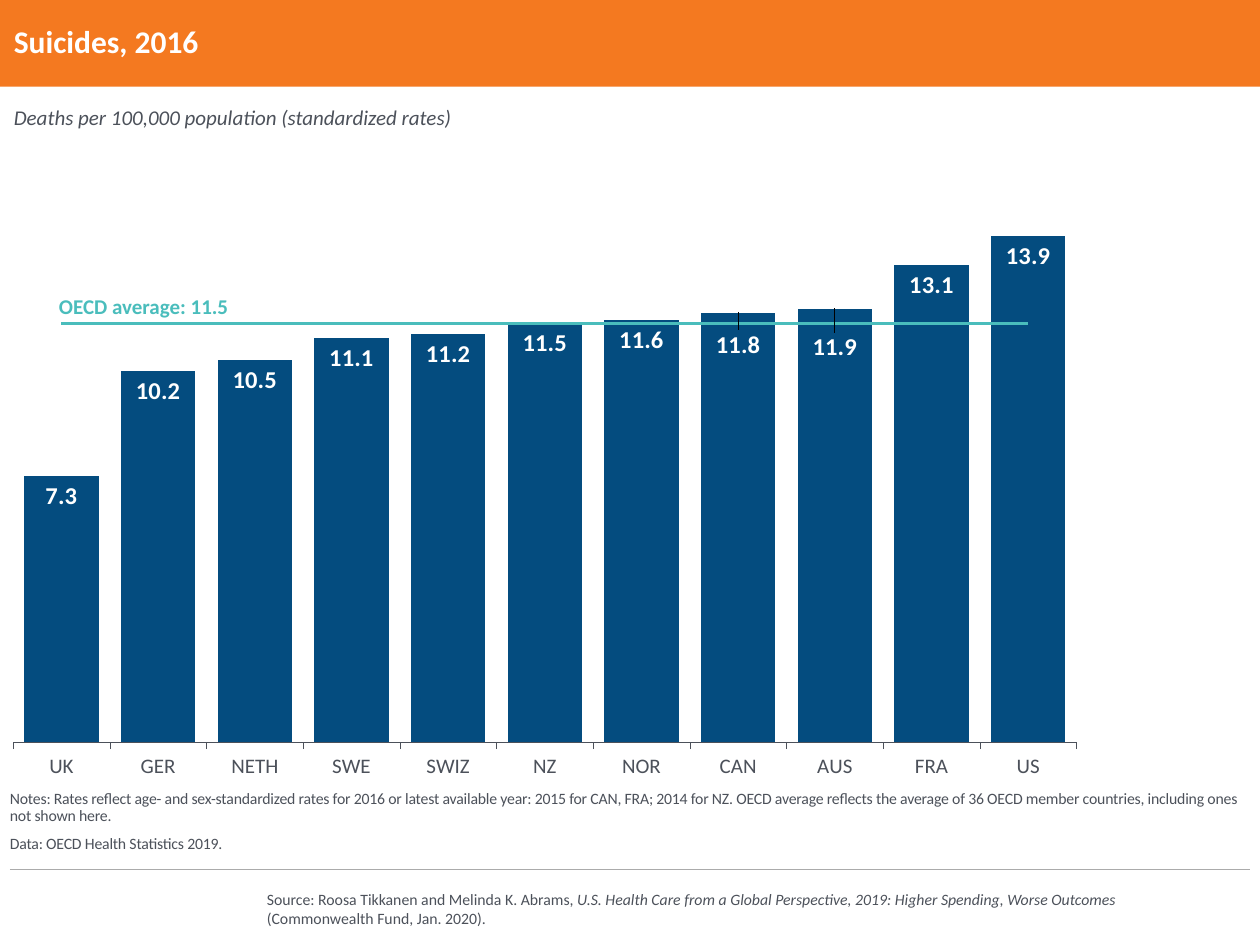
from lxml import etree
from pptx import Presentation
from pptx.chart.data import CategoryChartData
from pptx.dml.color import RGBColor
from pptx.enum import chart as charts, shapes, text
from pptx.oxml import ns
from pptx.util import Cm, Pt

ORANGE = RGBColor(0xF4, 0x79, 0x20)
NAVY = RGBColor(0x04, 0x4C, 0x7F)
TEAL = RGBColor(0x4A, 0xBD, 0xBC)
SLATE = RGBColor(0x4C, 0x51, 0x5A)
SILVER = RGBColor(0xAB, 0xAB, 0xAB)
WHITE = RGBColor(0xFF, 0xFF, 0xFF)
FONT = "Calibri"

DEATH_RATES = {
    "UK": 7.3, "GER": 10.2, "NETH": 10.5, "SWE": 11.1, "SWIZ": 11.2, "NZ": 11.5,
    "NOR": 11.6, "CAN": 11.8, "AUS": 11.9, "FRA": 13.1, "US": 13.9,
}
OECD_AVERAGE = 11.5
# Labels moved down to clear the average line, as a share of chart height
LABEL_DROPS = {"CAN": 0.02, "AUS": 0.03}


def set_font(font, size, color, bold=False, italic=False):
    font.name = FONT
    font.size = Pt(size)
    font.color.rgb = color
    font.bold = bold
    font.italic = italic


def add_text(page, paragraphs, left, top, width, height, size=12, color=SLATE,
             bold=False, italic=False, anchor=text.MSO_ANCHOR.TOP, inset=True,
             grow=False, line_spacing=None, space_after=None, tracking=None):
    """Each paragraph is a list of (words, italic) spans or a plain string."""
    box = page.shapes.add_textbox(Cm(left), Cm(top), Cm(width), Cm(height))
    frame = box.text_frame
    frame.word_wrap = True
    frame.vertical_anchor = anchor
    if grow:
        frame.auto_size = text.MSO_AUTO_SIZE.SHAPE_TO_FIT_TEXT
    if not inset:
        frame.margin_left = frame.margin_right = 0
        frame.margin_top = frame.margin_bottom = 0
    for index, spans in enumerate(paragraphs):
        para = frame.add_paragraph() if index else frame.paragraphs[0]
        para.line_spacing = line_spacing
        para.space_after = space_after
        if isinstance(spans, str):
            spans = [(spans, italic)]
        for words, slanted in spans:
            span = para.add_run()
            span.text = words
            set_font(span.font, size, color, bold, slanted)
            if tracking is not None:
                span.font._element.set("spc", str(tracking))
    return box


def add_banner(page):
    banner = page.shapes.add_shape(
        shapes.MSO_SHAPE.RECTANGLE, 0, 0, Cm(25.4), Cm(1.75))
    banner.shadow.inherit = False
    banner.fill.solid()
    banner.fill.fore_color.rgb = ORANGE
    banner.line.fill.background()


def add_rule(page, left, right, top):
    rule = page.shapes.add_connector(
        shapes.MSO_CONNECTOR.STRAIGHT, Cm(left), Cm(top), Cm(right), Cm(top))
    rule.line.color.rgb = SILVER
    rule.line.width = Pt(0.75)
    etree.SubElement(rule._element.spPr, ns.qn("a:effectLst"))


def chart_element(parent, tag, value=None):
    element = etree.SubElement(parent, ns.qn(tag))
    if value is not None:
        element.set("val", str(value))
    return element


def make_layout(**settings):
    layout = etree.Element(ns.qn("c:layout"))
    manual = chart_element(layout, "c:manualLayout")
    for name, value in settings.items():
        chart_element(manual, f"c:{name}", value)
    return layout


def remove_children(parent, tag):
    for child in parent.findall(ns.qn(tag)):
        parent.remove(child)


def move_to_line(chart):
    """Draw the second column series as a line on the same axes."""
    column_plot = chart.plots[0]._element
    series = column_plot.findall(ns.qn("c:ser"))[1]
    remove_children(series, "c:invertIfNegative")
    line_plot = column_plot.makeelement(ns.qn("c:lineChart"))
    chart_element(line_plot, "c:grouping", "standard")
    chart_element(line_plot, "c:varyColors", 0)
    line_plot.append(series)
    chart_element(line_plot, "c:marker", 1)
    for axis in column_plot.findall(ns.qn("c:axId")):
        chart_element(line_plot, "c:axId", axis.get("val"))
    column_plot.addnext(line_plot)


def format_axes(chart):
    countries = chart.category_axis
    countries.major_tick_mark = charts.XL_TICK_MARK.OUTSIDE
    countries.has_major_gridlines = False
    countries.format.line.color.rgb = SLATE
    countries.format.line.width = Pt(0.3)
    set_font(countries.tick_labels.font, 12, SLATE)
    rates = chart.value_axis
    rates.minimum_scale = 0
    rates.maximum_scale = 16
    rates.has_major_gridlines = False
    rates.visible = False


def format_columns(plot):
    plot.gap_width = 30
    plot.vary_by_categories = False
    columns = plot.series[0]
    columns.format.fill.solid()
    columns.format.fill.fore_color.rgb = NAVY
    labels = columns.data_labels
    labels.show_value = True
    labels.position = charts.XL_LABEL_POSITION.INSIDE_END
    labels.number_format = "#,##0.0"
    labels.number_format_is_linked = False
    set_font(labels.font, 14, WHITE, bold=True)
    for country, drop in LABEL_DROPS.items():
        label = columns.points[list(DEATH_RATES).index(country)].data_label
        label.position = charts.XL_LABEL_POSITION.INSIDE_END
        set_font(label.font, 14, WHITE, bold=True)
        index = label._get_or_add_dLbl().find(ns.qn("c:idx"))
        index.addnext(make_layout(x=0, y=drop))


def format_average(plot):
    average = plot.series[0]
    average.smooth = False
    average.marker.style = charts.XL_MARKER_STYLE.NONE
    average.format.line.color.rgb = TEAL
    average.format.line.width = Pt(2.25)


def add_rates_chart(page):
    data = CategoryChartData(number_format="0.0")
    data.categories = list(DEATH_RATES)
    data.add_series("Series 1", list(DEATH_RATES.values()))
    data.add_series("Series 2", [OECD_AVERAGE] * len(DEATH_RATES))
    chart = page.shapes.add_chart(
        charts.XL_CHART_TYPE.COLUMN_CLUSTERED,
        Cm(0.2), Cm(2.92), Cm(21.59), Cm(12.78), data).chart
    chart.has_title = False
    chart.has_legend = False
    set_font(chart.font, 11, SLATE)
    chart.font.name = "Arial"
    move_to_line(chart)
    format_axes(chart)
    format_columns(chart.plots[0])
    format_average(chart.plots[1])
    plot_area = chart.plots[0]._element.getparent()
    remove_children(plot_area, "c:layout")
    plot_area.insert(0, make_layout(
        layoutTarget="inner", xMode="edge", yMode="edge",
        x=0.003, y=0.024, w=0.993, h=0.929))


def main():
    deck = Presentation()
    deck.slide_width, deck.slide_height = Cm(25.4), Cm(19.05)
    page = deck.slides.add_slide(deck.slide_layouts[6])
    add_banner(page)
    add_rule(page, 0.2, 25.2, 17.53)
    source = [
        ("Source: Roosa Tikkanen and Melinda K. Abrams, ", False),
        ("U.S. Health Care from a Global Perspective, 2019: "
         "Higher Spending, Worse Outcomes ", True),
        ("(Commonwealth Fund, Jan. 2020).", False),
    ]
    add_text(page, [source], 5.13, 17.81, 19.18, 1.02, size=9, grow=True)
    add_rates_chart(page)
    add_text(page, ["Suicides, 2016"], 0.28, 0, 25, 1.75, size=18, color=WHITE,
             bold=True, anchor=text.MSO_ANCHOR.MIDDLE, inset=False,
             line_spacing=0.9)
    notes = [
        "Notes: Rates reflect age- and sex-standardized rates for 2016 or latest "
        "available year: 2015 for CAN, FRA; 2014 for NZ. OECD average reflects the "
        "average of 36 OECD member countries, including ones not shown here.",
        "Data: OECD Health Statistics 2019.",
    ]
    add_text(page, notes, 0.2, 15.82, 25, 1.37, size=9,
             anchor=text.MSO_ANCHOR.BOTTOM, inset=False, line_spacing=0.9,
             space_after=Pt(6), tracking=-10)
    add_text(page, [f"OECD average: {OECD_AVERAGE}"], 1.19, 5.92, 5.38, 0.51,
             color=TEAL, bold=True, inset=False, grow=True)
    add_text(page, ["Deaths per 100,000 population (standardized rates)"],
             0.28, 2.11, 12.22, 0.51, italic=True, inset=False, grow=True)
    deck.save("out.pptx")


if __name__ == "__main__":
    main()
